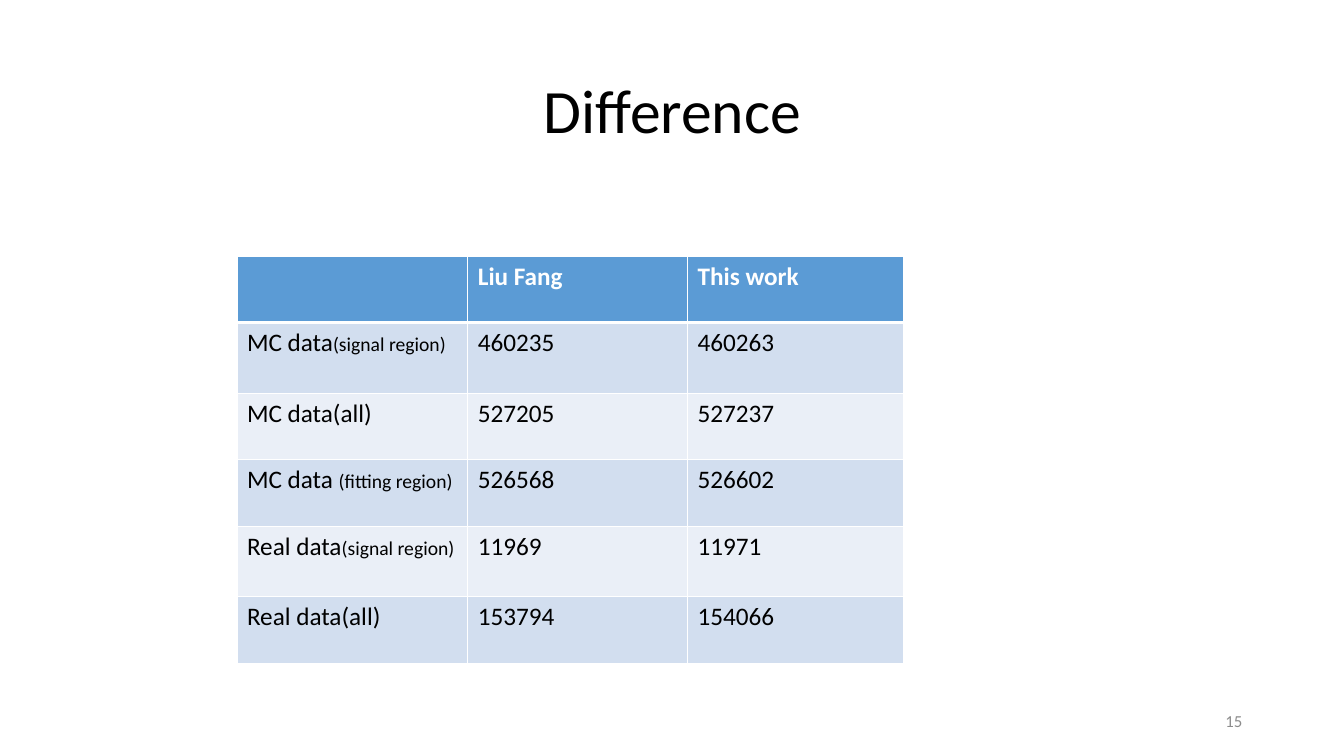
from lxml.etree import SubElement
from pptx import Presentation
from pptx.dml.color import RGBColor
from pptx.enum.text import MSO_ANCHOR, PP_ALIGN
from pptx.oxml.ns import qn
from pptx.util import Inches, Pt

# Content: each cell is a list of (text, size) runs
TITLE = "Difference"
PAGE = "15"
BIG, SMALL = 18, 14
ROWS = [
    ([], "Liu Fang", "This work"),
    ([("MC data", BIG), ("(signal region)", SMALL)], "460235", "460263"),
    ([("MC data(all)", BIG)], "527205", "527237"),
    ([("MC data ", BIG), ("(fitting region)", SMALL)], "526568", "526602"),
    ([("Real data", BIG), ("(signal region)", SMALL)], "11969", "11971"),
    ([("Real data(all)", BIG)], "153794", "154066"),
]
WIDTHS = [2.29, 2.18, 2.14]
HEIGHTS = [0.66, 0.7, 0.66, 0.66, 0.7, 0.66]

# Style
FONT = "Calibri"
BLACK = RGBColor(0x00, 0x00, 0x00)
WHITE = RGBColor(0xFF, 0xFF, 0xFF)
GREY = RGBColor(0x8C, 0x8C, 0x8C)
BLUE = RGBColor(0x5B, 0x9B, 0xD5)
BANDS = [RGBColor(0xEA, 0xEF, 0xF7), RGBColor(0xD2, 0xDE, 0xEF)]


def add_run(para, text, size, color, bold=False):
    run = para.add_run()
    run.text = text
    run.font.name = FONT
    run.font.size = Pt(size)
    run.font.bold = bold
    run.font.color.rgb = color


def add_label(slide, box, text, size, color, align):
    frame = slide.shapes.add_textbox(*map(Inches, box)).text_frame
    frame.word_wrap = True
    frame.vertical_anchor = MSO_ANCHOR.MIDDLE
    para = frame.paragraphs[0]
    para.alignment = align
    add_run(para, text, size, color)
    return para


def add_edge(cell, side, width):
    props = cell._tc.get_or_add_tcPr()
    line = SubElement(props, qn(f"a:{side}"), w=str(Pt(width)))
    fill = SubElement(line, qn("a:solidFill"))
    SubElement(fill, qn("a:srgbClr"), val=str(WHITE))


def fill_cell(cell, runs, row):
    head = row == 0
    for text, size in runs:
        add_run(cell.text_frame.paragraphs[0], text, size,
                WHITE if head else BLACK, head)
    # Borders come before the fill in the cell properties
    for side in ("lnL", "lnR", "lnT", "lnB"):
        thick = (head and side == "lnB") or (row == 1 and side == "lnT")
        add_edge(cell, side, 3 if thick else 1)
    cell.fill.solid()
    cell.fill.fore_color.rgb = BLUE if head else BANDS[row % 2]


def main():
    deck = Presentation()
    deck.slide_width, deck.slide_height = Inches(13.33), Inches(7.5)
    slide = deck.slides.add_slide(deck.slide_layouts[6])

    # Title
    title = add_label(slide, (0.92, 0.4, 11.5, 1.45), TITLE, 44, BLACK,
                      PP_ALIGN.CENTER)
    title.line_spacing = 0.9

    # Table
    size = (sum(WIDTHS), sum(HEIGHTS))
    table = slide.shapes.add_table(
        len(ROWS), len(WIDTHS), *map(Inches, (2.35, 2.54, *size))).table
    for col, width in zip(table.columns, WIDTHS):
        col.width = Inches(width)
    for row, (label, *values) in enumerate(ROWS):
        table.rows[row].height = Inches(HEIGHTS[row])
        cells = [label] + [[(value, BIG)] for value in values]
        for col, runs in enumerate(cells):
            fill_cell(table.cell(row, col), runs, row)

    # Page number
    add_label(slide, (9.42, 6.95, 3, 0.4), PAGE, 12, GREY, PP_ALIGN.RIGHT)

    deck.save("out.pptx")


if __name__ == "__main__":
    main()
